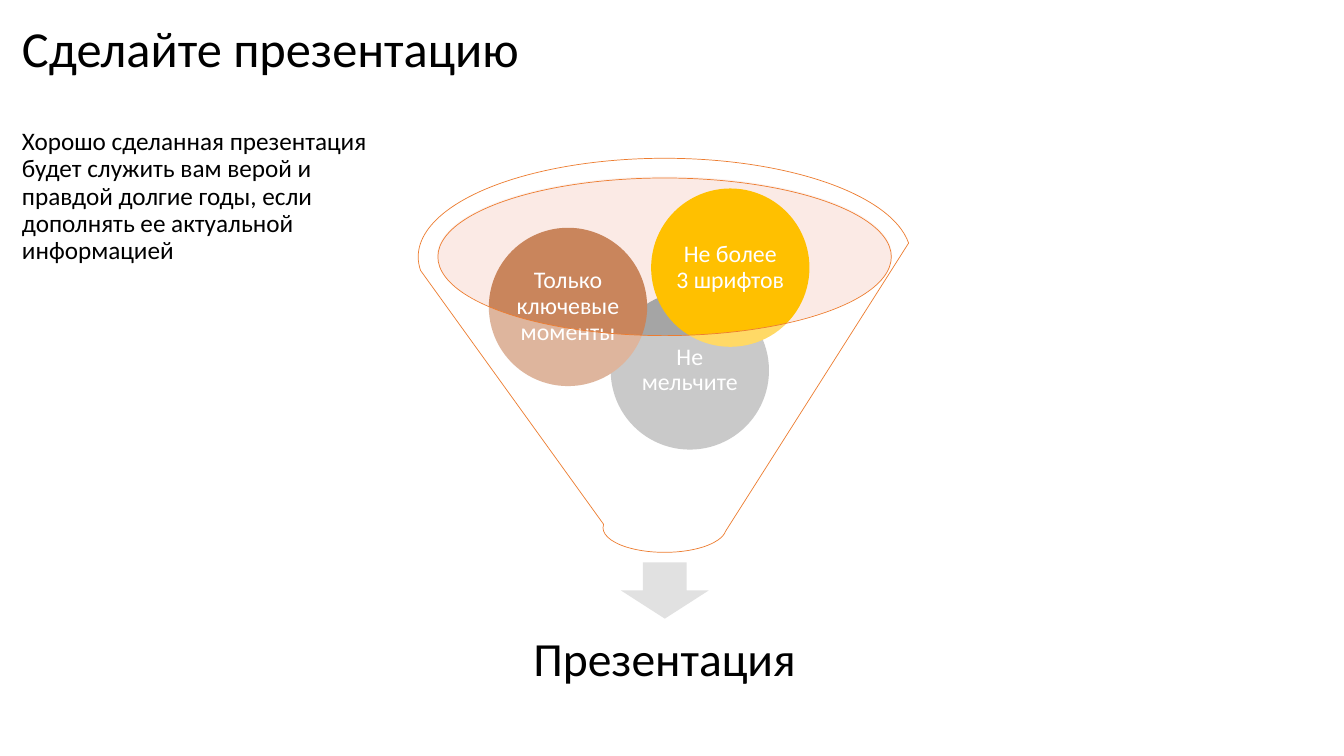
from lxml import etree
from pptx import Presentation
from pptx.dml.color import RGBColor
from pptx.enum.shapes import MSO_SHAPE
from pptx.enum.text import MSO_ANCHOR, MSO_AUTO_SIZE, PP_ALIGN
from pptx.oxml.ns import qn
from pptx.util import Cm, Pt

OVAL, FUNNEL, ARROW = MSO_SHAPE.OVAL, MSO_SHAPE.FUNNEL, MSO_SHAPE.DOWN_ARROW
LEFT, CENTER = PP_ALIGN.LEFT, PP_ALIGN.CENTER
TOP, MIDDLE = MSO_ANCHOR.TOP, MSO_ANCHOR.MIDDLE
NO_AUTOFIT = MSO_AUTO_SIZE.NONE

FONT = "Calibri"
BLACK = RGBColor(0x00, 0x00, 0x00)
WHITE = RGBColor(0xFF, 0xFF, 0xFF)
PALE_PINK = RGBColor(0xF6, 0xCC, 0xBE)
LIGHT_GREY = RGBColor(0xE1, 0xE1, 0xE1)
GREY = RGBColor(0xA5, 0xA5, 0xA5)
BROWN = RGBColor(0xC9, 0x85, 0x5C)
YELLOW = RGBColor(0xFF, 0xC0, 0x00)
ORANGE = RGBColor(0xED, 0x7D, 0x31)

BALL_SIZE = 3.99
# Text, left, top, colour: from back to front
BALLS = [
    ("Не мельчите", 15.39, 7.34, GREY),
    ("Только ключевые моменты", 12.32, 5.74, BROWN),
    ("Не более 3 шрифтов", 16.41, 4.75, YELLOW),
]


def write(shape, text, *, size, color=BLACK, align=LEFT, anchor=MIDDLE, inset=None):
    frame = shape.text_frame
    frame.word_wrap = True
    frame.auto_size = NO_AUTOFIT
    frame.vertical_anchor = anchor
    if inset is not None:
        frame.margin_left = frame.margin_right = Cm(inset)
        frame.margin_top = frame.margin_bottom = Cm(inset)
    frame.text = text
    paragraph = frame.paragraphs[0]
    paragraph.alignment = align
    paragraph.line_spacing = 0.9
    paragraph.space_before = Pt(0)
    font = paragraph.runs[0].font
    font.name, font.size, font.bold = FONT, Pt(size), False
    font.color.rgb = color


def place(shape, left, top, width, height):
    shape.left, shape.top = Cm(left), Cm(top)
    shape.width, shape.height = Cm(width), Cm(height)


def add_figure(slide, kind, box, fill, *, opacity=None, line=None):
    figure = slide.shapes.add_shape(kind, *map(Cm, box))
    figure.shadow.inherit = False
    figure.fill.solid()
    figure.fill.fore_color.rgb = fill
    if opacity is not None:
        color = figure.fill._xPr.find(f"{qn('a:solidFill')}/{qn('a:srgbClr')}")
        etree.SubElement(color, qn("a:alpha"), val=str(opacity * 1000))
    if line is None:
        figure.line.fill.background()
    else:
        figure.line.color.rgb = line
        figure.line.width = Pt(0.5)
    return figure


def add_headings(slide):
    title, content, body = slide.placeholders
    content.element.getparent().remove(content.element)
    place(title, 0.3, -0.56, 29.21, 3.68)
    write(title, "Сделайте презентацию", size=36)
    place(body, 0.3, 3.12, 9.32, 6.12)
    write(body, "Хорошо сделанная презентация будет служить вам верой и правдой "
          "долгие годы, если дополнять ее актуальной информацией",
          size=18, anchor=TOP)


def add_funnel(slide):
    # Mouth, arrow and result
    add_figure(slide, OVAL, (11.02, 4.45, 11.46, 3.99), PALE_PINK, opacity=40)
    add_figure(slide, ARROW, (15.65, 14.17, 2.21, 1.42), LIGHT_GREY)
    result = slide.shapes.add_textbox(Cm(11.43), Cm(15.32), Cm(10.64), Cm(2.67))
    write(result, "Презентация", size=34, align=CENTER, inset=0.66)

    # Balls inside the funnel
    for text, left, top, color in BALLS:
        ball = add_figure(slide, OVAL, (left, top, BALL_SIZE, BALL_SIZE), color)
        write(ball, text, size=17, color=WHITE, align=CENTER, inset=0.05)

    # Translucent wall in front
    add_figure(slide, FUNNEL, (10.54, 3.99, 12.42, 9.93), WHITE,
               opacity=40, line=ORANGE)


def main():
    deck = Presentation()
    deck.slide_width, deck.slide_height = Cm(33.87), Cm(19.05)
    slide = deck.slides.add_slide(deck.slide_layouts.get_by_name("Content with Caption"))
    add_headings(slide)
    add_funnel(slide)
    deck.save("out.pptx")


if __name__ == "__main__":
    main()
